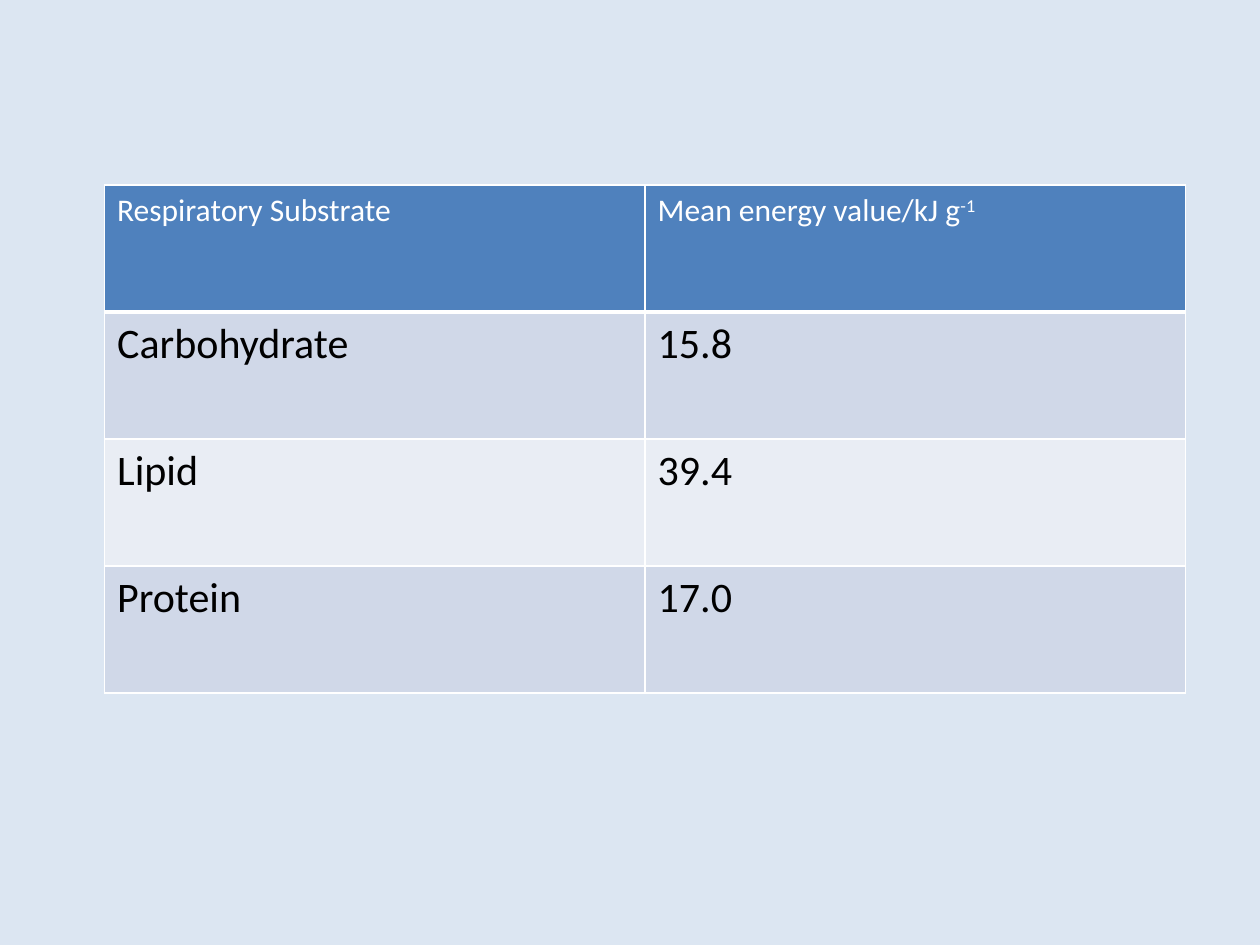
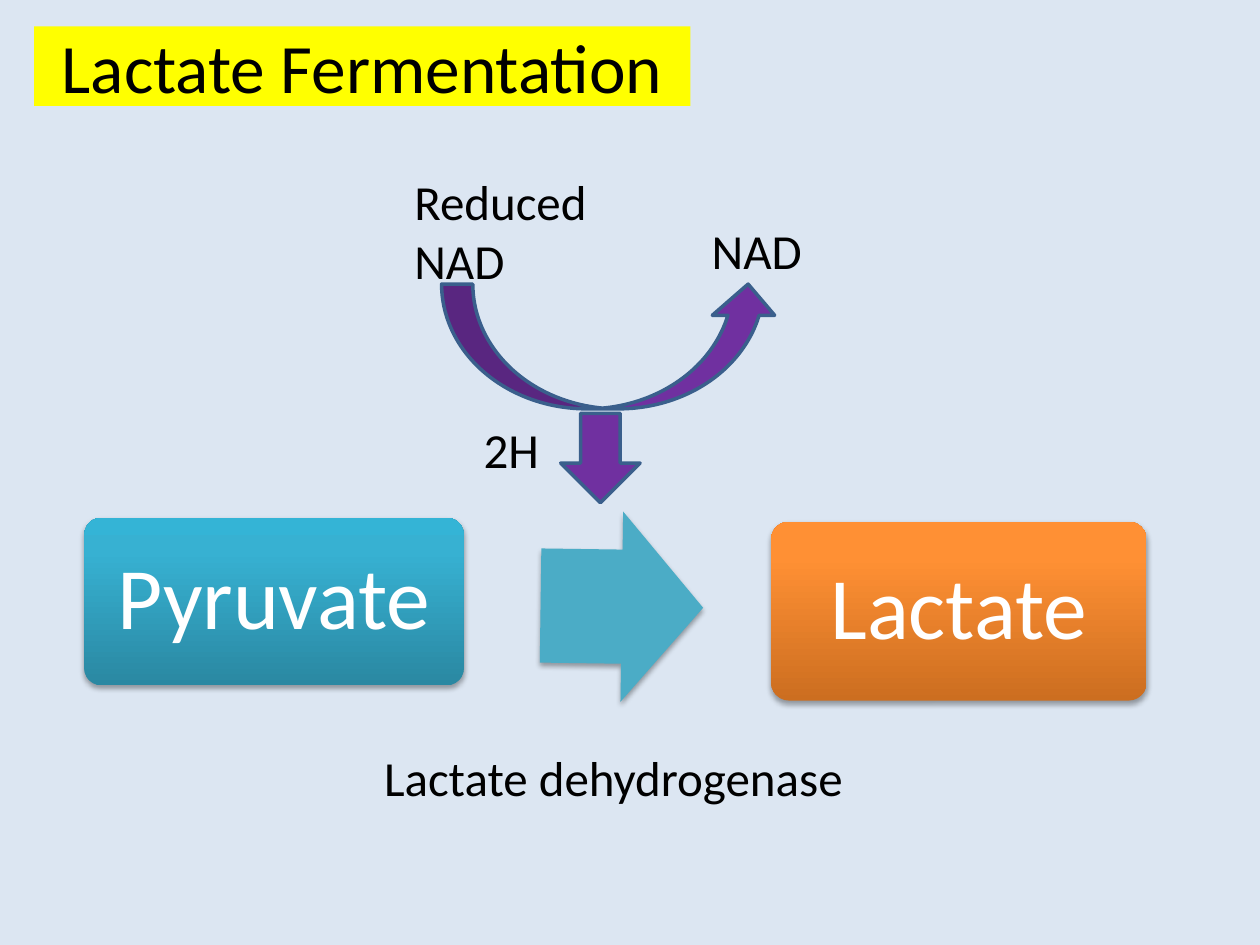
"""Build two slides on respiratory substrates and lactate fermentation."""
from dataclasses import dataclass
from typing import Any

from lxml import etree
from pptx import Presentation
from pptx import util as u
from pptx.dml.color import RGBColor
from pptx.enum import shapes, text
from pptx.oxml.ns import qn

FACE = "Calibri"
PALE, BLACK, WHITE, YELLOW = "DCE6F2", "000000", "FFFFFF", "FFFF00"
HEAD, BANDS = "4F81BD", ("D0D8E8", "E9EDF4")
PURPLE, EDGE, TEAL = "7030A0", "3A5F8C", "4BACC6"
KIND = shapes.MSO_SHAPE
MID = text.MSO_ANCHOR.MIDDLE
ROWS = (
    ("Respiratory Substrate", "Mean energy value/kJ g"),
    ("Carbohydrate", "15.8"),
    ("Lipid", "39.4"),
    ("Protein", "17.0"),
)


@dataclass
class Place:
    left: float
    top: float
    width: float
    height: float

    def size(self) -> tuple:
        return tuple(u.Inches(n) for n in (self.left, self.top, self.width, self.height))


@dataclass
class Label:
    words: str
    place: Place


@dataclass
class Card:
    words: str
    place: Place
    stops: tuple


@dataclass
class Arrow:
    kind: Any
    place: Place
    turn: float


LABELS = (
    Label("2H", Place(3.74, 3.28, 0.87, 0.57)),
    Label("NAD", Place(5.55, 1.7, 1.18, 0.57)),
    Label("Reduced NAD", Place(3.19, 1.31, 1.81, 1.04)),
    Label("Lactate dehydrogenase", Place(2.95, 5.88, 3.94, 0.57)),
)
CARDS = (
    Card("Pyruvate", Place(0.67, 4.11, 3.01, 1.33), ("2A88A2", "37B1D2", "34B4D6")),
    Card("Lactate", Place(6.12, 4.14, 2.98, 1.42), ("CC6E20", "FF9034", "FF9136")),
)
STEP = Arrow(KIND.RIGHT_ARROW, Place(4.29, 4.06, 1.29, 1.51), 0.8)
FLOWS = (
    Arrow(KIND.CURVED_RIGHT_ARROW, Place(4.35, 1.41, 0.99, 2.68), 270),
    Arrow(KIND.RIGHT_ARROW, Place(4.41, 3.32, 0.71, 0.63), 90),
)


def paint(fill: Any, code: str) -> None:
    fill.solid()
    fill.fore_color.rgb = RGBColor.from_string(code)


def style(para: Any, size: float, code: str) -> None:
    for run in para.runs:
        run.font.name = FACE
        run.font.size = u.Pt(size)
        run.font.bold = False
        run.font.color.rgb = RGBColor.from_string(code)


def node(root: Any, tag: str, **attrs: Any) -> Any:
    return etree.SubElement(root, qn(tag), {key: str(val) for key, val in attrs.items()})


def shade(shape: Any) -> None:
    shape.shadow.inherit = False
    glow = node(shape.element.spPr.find(qn("a:effectLst")), "a:outerShdw",
                blurRad=u.Pt(3.1), dist=u.Pt(1.8), dir=5400000, rotWithShape=0)
    node(node(glow, "a:srgbClr", val=BLACK), "a:alpha", val=35000)


def blend(shape: Any, stops: tuple) -> None:
    shape.fill.gradient()
    shape.fill.gradient_angle = 90
    ramp = shape.element.spPr.find(".//" + qn("a:gsLst"))
    for old in list(ramp):
        ramp.remove(old)
    for part, code in zip((0, 80, 100), stops):
        node(node(ramp, "a:gs", pos=part * 1000), "a:srgbClr", val=code)


def border(cell: Any, base: float) -> None:
    props = cell._tc.get_or_add_tcPr()
    for side, width in zip("LRTB", (1, 1, 1, base)):
        line = node(props, f"a:ln{side}", w=u.Pt(width))
        node(node(line, "a:solidFill"), "a:srgbClr", val=WHITE)


def draw_table(slide: Any, place: Place) -> None:
    table = slide.shapes.add_table(len(ROWS), len(ROWS[0]), *place.size()).table
    for r, row in enumerate(ROWS):
        top = r == 0
        for c, words in enumerate(row):
            cell = table.cell(r, c)
            cell.text = words
            para = cell.text_frame.paragraphs[0]
            if top and c == 1:
                power = para.add_run()
                power.text = "-1"
                power.font._element.set("baseline", "30000")
            style(para, 18 if top else 24, WHITE if top else BLACK)
            border(cell, 3 if top else 1)
            paint(cell.fill, HEAD if top else BANDS[(r - 1) % 2])


def draw_title(slide: Any, words: str, place: Place) -> None:
    title = slide.shapes.title
    title.left, title.top, title.width, title.height = place.size()
    paint(title.fill, YELLOW)
    frame = title.text_frame
    frame.text = words
    frame.vertical_anchor = MID
    para = frame.paragraphs[0]
    para.alignment = text.PP_ALIGN.CENTER
    style(para, 39.6, BLACK)


def draw_card(slide: Any, card: Card) -> None:
    shape = slide.shapes.add_shape(KIND.ROUNDED_RECTANGLE, *card.place.size())
    shape.adjustments[0] = 0.1
    blend(shape, card.stops)
    shape.line.fill.background()
    shade(shape)
    frame = shape.text_frame
    frame.text = card.words
    frame.word_wrap = True
    frame.vertical_anchor = MID
    frame.margin_left = frame.margin_right = u.Inches(0.21)
    frame.margin_top = frame.margin_bottom = u.Inches(0.21)
    para = frame.paragraphs[0]
    para.alignment = text.PP_ALIGN.CENTER
    para.line_spacing = 0.9
    style(para, 50, WHITE)


def draw_arrow(slide: Any, arrow: Arrow, code: str) -> Any:
    shape = slide.shapes.add_shape(arrow.kind, *arrow.place.size())
    shape.rotation = arrow.turn
    shape.shadow.inherit = False
    paint(shape.fill, code)
    return shape


def draw_step(slide: Any) -> None:
    shape = draw_arrow(slide, STEP, TEAL)
    shape.adjustments[0] = 0.6
    shape.line.fill.background()
    shade(shape)


def draw_flow(slide: Any, arrow: Arrow) -> None:
    shape = draw_arrow(slide, arrow, PURPLE)
    paint(shape.line.fill, EDGE)
    shape.line.width = u.Pt(2)


def draw_label(slide: Any, label: Label) -> None:
    frame = slide.shapes.add_textbox(*label.place.size()).text_frame
    frame.word_wrap = True
    frame.auto_size = text.MSO_AUTO_SIZE.SHAPE_TO_FIT_TEXT
    frame.text = label.words
    style(frame.paragraphs[0], 28, BLACK)


def main() -> None:
    deck = Presentation()
    deck.slide_width, deck.slide_height = u.Inches(10), u.Inches(7.5)
    paint(deck.slide_master.background.fill, PALE)
    only, blank = deck.slide_layouts[5], deck.slide_layouts[6]

    draw_table(deck.slides.add_slide(blank), Place(0.83, 1.47, 8.58, 4.03))

    slide = deck.slides.add_slide(only)
    draw_title(slide, "Lactate Fermentation", Place(0.27, 0.21, 5.21, 0.63))
    for card in CARDS:
        draw_card(slide, card)
    draw_step(slide)
    for arrow in FLOWS:
        draw_flow(slide, arrow)
    for label in LABELS:
        draw_label(slide, label)
    deck.save("out.pptx")


if __name__ == "__main__":
    main()
